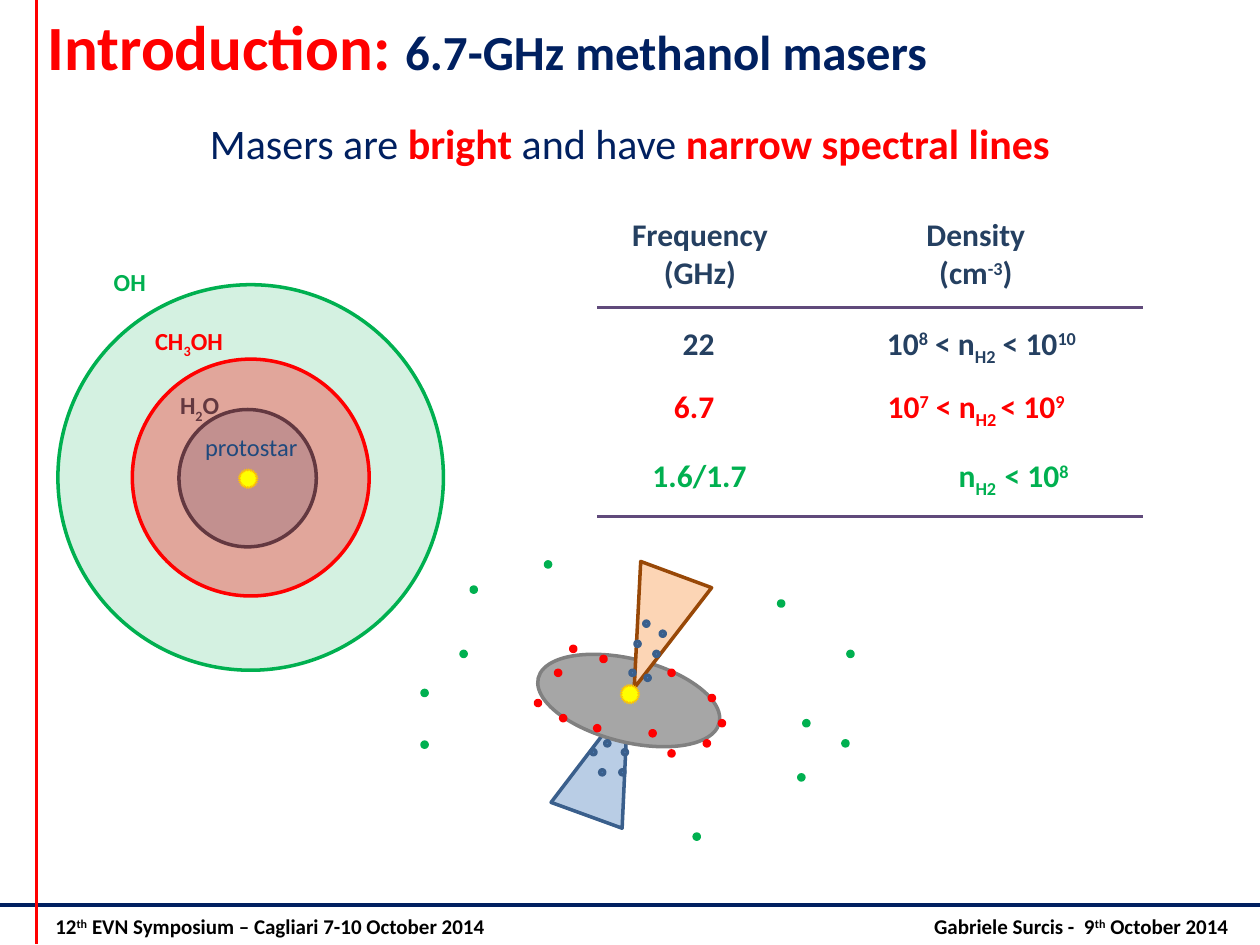
from lxml.etree import SubElement
from pptx import Presentation
from pptx.dml.color import RGBColor
from pptx.enum.shapes import MSO_CONNECTOR as Conn, MSO_SHAPE as Geo
from pptx.enum.text import PP_ALIGN as Align
from pptx.oxml.ns import qn
from pptx.util import Inches, Pt

NAVY = RGBColor(0x00, 0x20, 0x60)
RED = RGBColor(0xFF, 0x00, 0x00)
GREEN = RGBColor(0x00, 0xB0, 0x50)
BLACK = RGBColor(0x00, 0x00, 0x00)
SLATE = RGBColor(0x25, 0x40, 0x61)
INK = RGBColor(0x1F, 0x49, 0x7D)
BLUE = RGBColor(0x4F, 0x81, 0xBD)
STEEL = RGBColor(0x3A, 0x5F, 0x8C)
SKY = RGBColor(0xB9, 0xCD, 0xE5)
PEACH = RGBColor(0xFC, 0xD5, 0xB5)
BROWN = RGBColor(0x98, 0x48, 0x07)
SILVER = RGBColor(0xA6, 0xA6, 0xA6)
GREY = RGBColor(0x80, 0x80, 0x80)
PURPLE = RGBColor(0x60, 0x4A, 0x7B)
YELLOW = RGBColor(0xFF, 0xFF, 0x00)
GOLD = RGBColor(0xFF, 0xC0, 0x00)
SUP, SUB = 30, -25
DOT = 0.04


def rule(slide, start, end, color, width):
    """Draw a straight line between two points."""
    line = slide.shapes.add_connector(Conn.STRAIGHT, *map(Inches, start + end))
    line.line.color.rgb = color
    line.line.width = Pt(width)
    SubElement(line._element.spPr, qn("a:effectLst"))


def form(slide, geo, box, fill, edge, width=2, turn=0, alpha=None):
    """Draw a filled preset shape, with an optional opacity in percent."""
    shape = slide.shapes.add_shape(geo, *map(Inches, box))
    shape.shadow.inherit = False
    shape.rotation = turn
    shape.fill.solid()
    shape.fill.fore_color.rgb = fill
    shape.line.color.rgb = edge
    shape.line.width = Pt(width)
    if alpha:
        tint = shape._element.spPr.find(qn("a:solidFill"))[0]
        SubElement(tint, qn("a:alpha"), val=str(alpha * 1000))


def star(slide, x, y):
    """Draw the protostar."""
    form(slide, Geo.STAR_32_POINT, (x, y, 0.16, 0.16), YELLOW, GOLD, 0.25)


def add_run(para, words, size, color, bold=True, base=0):
    """Add one run to a paragraph."""
    run = para.add_run()
    run.text = words
    font = run.font
    font.name, font.size, font.bold = "Calibri", Pt(size), bold
    font.color.rgb = color
    if base:
        run._r.get_or_add_rPr().set("baseline", str(base * 1000))


def frame(slide, box, wrap=True):
    """Add an empty text box and return its text frame."""
    body = slide.shapes.add_textbox(*map(Inches, box)).text_frame
    body.word_wrap = wrap
    return body


def label(slide, box, rows, size, color, bold=True, align=Align.CENTER):
    """Write rows of (words, baseline) pairs in one style."""
    body = frame(slide, box, False)
    for i, row in enumerate(rows):
        para = body.add_paragraph() if i else body.paragraphs[0]
        para.alignment = align
        for words, base in row:
            add_run(para, words, size, color, bold, base)


def title(slide, box):
    """Write the heading."""
    para = frame(slide, box).paragraphs[0]
    add_run(para, "Introduction: ", 36, RED)
    add_run(para, "6.7-GHz methanol masers", 28, NAVY)


def claim(slide, box):
    """Write the key statement."""
    para = frame(slide, box).paragraphs[0]
    para.alignment = Align.CENTER
    add_run(para, "Masers are ", 24, NAVY, False)
    add_run(para, "bright", 24, RED)
    add_run(para, " and have ", 24, NAVY, False)
    add_run(para, "narrow spectral lines", 24, RED)


def footer(slide, box):
    """Write the event on the left and the speaker at a right tab."""
    para = frame(slide, box).paragraphs[0]
    tabs = SubElement(para._p.get_or_add_pPr(), qn("a:tabLst"))
    SubElement(tabs, qn("a:tab"), pos=str(Inches(9.31)), algn="r")
    for words, base in (("12", 0), ("th", SUP),
                        (" EVN Symposium – Cagliari 7-10 October 2014", 0),
                        ("\tGabriele Surcis -  9", 0), ("th", SUP),
                        (" October 2014", 0)):
        add_run(para, words, 12, BLACK, base=base)


def rings(slide, box):
    """Draw the nested maser zones around the protostar."""
    x, y = box
    zones = (
        ((0.96, 1.18), 1.09, BLUE, SLATE, 30, (0.81, 0.98, 0.63),
         (("H", 0), ("2", SUB), ("O", 0))),
        ((0, 0.19), 3.06, GREEN, GREEN, 17, (0.1, 0, 0.94), (("OH", 0),)),
        ((0.59, 0.78), 1.88, RED, RED, 31, (0.57, 0.47, 0.94),
         (("CH", 0), ("3", SUB), ("OH", 0))),
    )
    for (dx, dy), size, fill, edge, alpha, (tx, ty, wide), row in zones:
        tag = (x + tx, y + ty, wide, 0.34)
        if edge == SLATE:
            label(slide, tag, [row], 14, edge)
        form(slide, Geo.OVAL, (x + dx, y + dy, size, size), fill, edge, alpha=alpha)
        if edge != SLATE:
            label(slide, tag, [row], 14, edge)
    label(slide, (x + 0.87, y + 1.31, 1.33, 0.34), [[("protostar", 0)]], 14, INK, False)
    star(slide, x + 1.43, y + 1.65)


def chart(slide, box):
    """Set out frequencies and densities between two rules."""
    x, y, wide = box
    label(slide, (x + 0.11, y, 1.41, 0.71),
          [[("Frequency", 0)], [("(GHz)", 0)]], 18, SLATE)
    label(slide, (x + 2.3, y, 1.41, 0.71),
          [[("Density", 0)], [("(cm", 0), ("-3", SUP), (")", 0)]], 18, SLATE)
    rows = (
        (0.86, SLATE, "22", 0.58, 0.55, 2.2, 2.34,
         (("10", 0), ("8", SUP), (" < n", 0), ("H2", SUB), (" < 10", 0), ("10", SUP))),
        (1.36, RED, "6.7", 0.51, 0.61, 2.15, 1.98,
         ((" 10", 0), ("7", SUP), (" < n", 0), ("H2 ", SUB), ("< 10", 0), ("9", SUP))),
        (1.91, GREEN, "1.6/1.7", 0.34, 0.95, 2.77, 1.36,
         (("n", 0), ("H2  ", SUB), ("< 10", 0), ("8", SUP))),
    )
    for dy, color, freq, fx, fw, nx, nw, dens in rows:
        label(slide, (x + fx, y + dy, fw, 0.4), [[(freq, 0)]], 18, color, align=Align.LEFT)
        body = frame(slide, (x + nx, y + dy, nw, 0.4))
        for words, base in dens:
            add_run(body.paragraphs[0], words, 18, color, base=base)
    for dy, width in ((0.78, 1.5), (2.44, 1.75)):
        rule(slide, (x, y + dy), (x + wide, y + dy), PURPLE, width)


def disk(slide, box):
    """Draw the disk, its two outflows and the scattered maser spots."""
    x, y = box
    cone = Geo.ISOSCELES_TRIANGLE
    form(slide, cone, (x + 1.17, y + 1.08, 0.6, 0.96), SKY, STEEL, turn=20)
    form(slide, Geo.OVAL, (x + 0.9, y + 0.77, 1.48, 0.66), SILVER, GREY, turn=14)
    form(slide, cone, (x + 1.55, y + 0.07, 0.6, 0.96), PEACH, BROWN, turn=200.3)
    star(slide, x + 1.57, y + 0.97)
    spots = (
        (BLUE, STEEL, ((1.84, 0.71), (1.89, 0.55), (1.69, 0.63), (1.65, 0.86),
                       (1.77, 0.9), (1.59, 1.49), (1.34, 1.49), (1.41, 1.65),
                       (1.45, 1.42), (1.57, 1.65), (1.76, 0.47))),
        (RED, RED, ((2.24, 1.42), (2.36, 1.26), (2.28, 1.06), (1.81, 1.34),
                    (1.37, 1.3), (0.9, 1.1), (1.06, 0.86), (1.18, 0.67),
                    (1.96, 0.86), (1.1, 1.22), (1.42, 0.75), (1.96, 1.5))),
        (GREEN, GREEN, ((3.03, 1.26), (2.99, 1.69), (3.34, 1.42), (3.38, 0.71),
                        (0, 1.43), (0.31, 0.71), (0, 1.02), (0.39, 0.2),
                        (2.16, 2.16), (2.83, 0.31), (0.98, 0))),
    )
    for fill, edge, places in spots:
        for dx, dy in places:
            form(slide, Geo.OVAL, (x + dx, y + dy, DOT, DOT), fill, edge)


def main():
    """Build and save the slide."""
    deck = Presentation()
    deck.slide_width, deck.slide_height = Inches(10), Inches(7.5)
    slide = deck.slides.add_slide(deck.slide_layouts[6])
    rule(slide, (-0.04, 7.18), (10, 7.18), NAVY, 2.25)
    rule(slide, (0.29, -0.03), (0.29, 7.49), RED, 2.25)
    footer(slide, (0.34, 7.2, 9.61, 0.3))
    rings(slide, (0.46, 2.07))
    chart(slide, (4.74, 1.66, 4.33))
    claim(slide, (0, 0.88, 10, 0.5))
    disk(slide, (3.35, 4.46))
    title(slide, (0.28, 0.01, 9.53, 0.71))
    deck.save("out.pptx")


if __name__ == "__main__":
    main()
